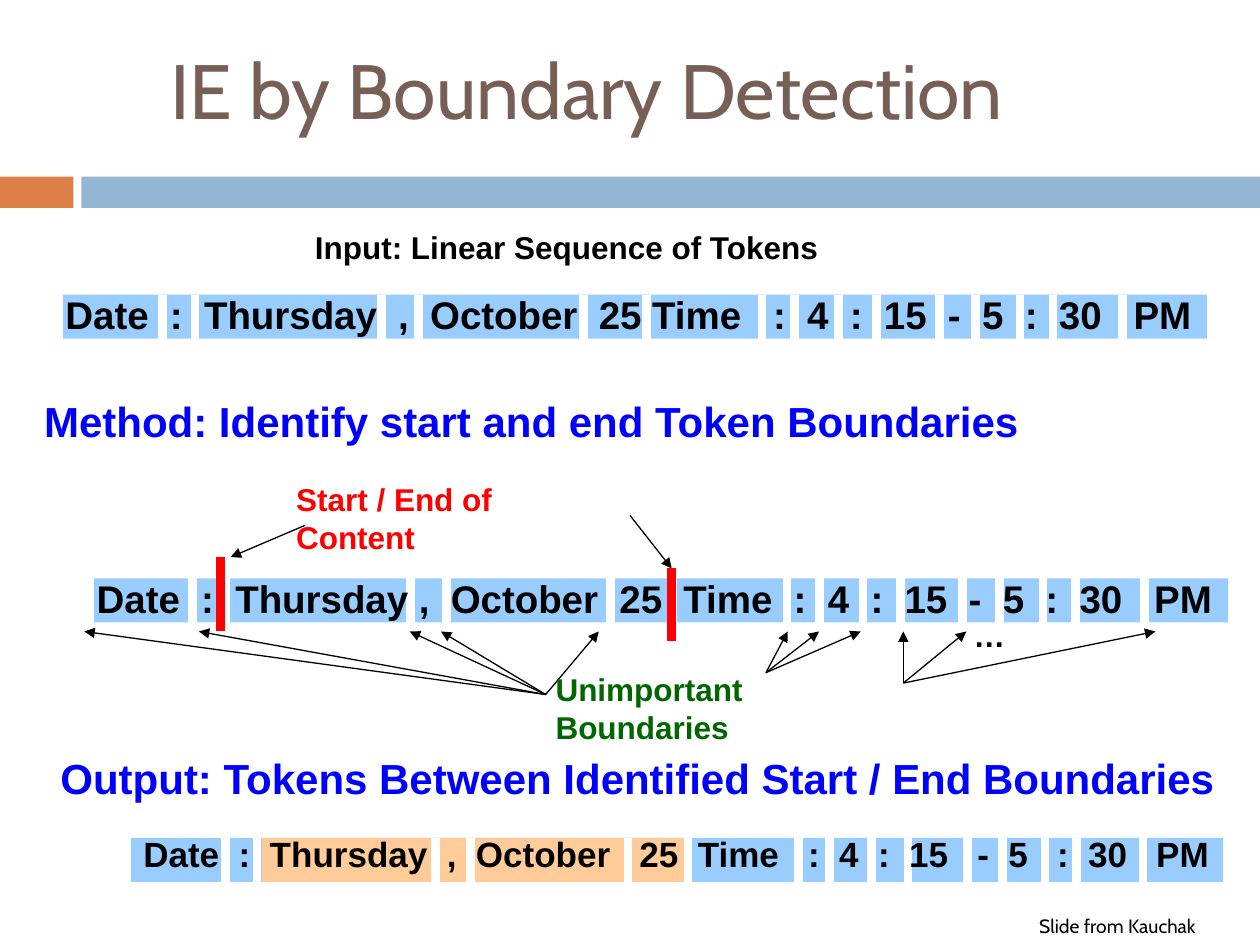
from lxml import etree
from pptx import Presentation
from pptx.dml.color import RGBColor
from pptx.enum.shapes import MSO_CONNECTOR, MSO_SHAPE
from pptx.enum.text import MSO_ANCHOR
from pptx.oxml.ns import qn
from pptx.util import Cm, Pt

RECTANGLE = MSO_SHAPE.RECTANGLE
STRAIGHT = MSO_CONNECTOR.STRAIGHT
TOP, MIDDLE = MSO_ANCHOR.TOP, MSO_ANCHOR.MIDDLE

BLACK, WHITE, RED, BLUE, GREEN = "000000", "FFFFFF", "FF0000", "0000FF", "006600"
TOKEN_BLUE, TOKEN_ORANGE = "99CCFF", "FFCC99"
BAR_HEIGHT = 0.89

# Token boundaries as percentages of the bar width, shared by all three bars
BOUNDARIES = (8.67, 11.55, 27.87, 31.08, 45.5, 51, 61.1, 63.95, 67.8,
              71.13, 76.6, 79.8, 83.67, 86.55, 92.65)

# Apex of each fan of arrows and the x positions of its tips
FANS = (
    ((11, 14), (1.7, 4.01, 8.26, 8.89, 12.07)),
    ((15.44, 13.56), (15.88, 16.51, 17.35)),
    ((18.21, 13.77), (23.29, 18.21, 19.48)),
)
FAN_TIP_Y = 12.73


def color(value):
    return RGBColor.from_string(value)


class SlideBuilder:
    """Holds the text style and the slide being drawn; lengths are in cm."""

    text_style = {"name": "Arial", "bold": True, "size": Pt(18)}

    def __init__(self, slide):
        self.slide = slide

    def rectangle(self, left, top, width, height, fill, shapes=None):
        shape = (shapes or self.slide.shapes).add_shape(
            RECTANGLE, Cm(left), Cm(top), Cm(width), Cm(height))
        shape.shadow.inherit = False
        shape.fill.solid()
        shape.fill.fore_color.rgb = color(fill)
        shape.line.fill.background()

    def line(self, start, end, line_color=BLACK, weight=0.75, arrow=False, shapes=None):
        connector = (shapes or self.slide.shapes).add_connector(
            STRAIGHT, *(Cm(value) for value in (*start, *end)))
        connector.line.color.rgb = color(line_color)
        connector.line.width = Pt(weight)
        if arrow:
            outline = connector.line._get_or_add_ln()
            etree.SubElement(outline, qn("a:tailEnd"), type="triangle")
        etree.SubElement(connector._element.spPr, qn("a:effectLst"))

    def text(self, content, left, top, width, height, text_color=BLACK,
             anchor=TOP, **style):
        box = self.slide.shapes.add_textbox(Cm(left), Cm(top), Cm(width), Cm(height))
        frame = box.text_frame
        frame.word_wrap = True
        frame.vertical_anchor = anchor
        run = frame.paragraphs[0].add_run()
        run.text = content
        for attribute, value in {**self.text_style, **style}.items():
            setattr(run.font, attribute, value)
        run.font.color.rgb = color(text_color)

    def token_bar(self, left, top, width, highlight=None):
        """Draw a grouped bar cut into tokens; highlight is (left, width)."""
        shapes = self.slide.shapes.add_group_shape().shapes
        self.rectangle(left, top, width, BAR_HEIGHT, TOKEN_BLUE, shapes)
        if highlight:
            self.rectangle(highlight[0], top, highlight[1], BAR_HEIGHT,
                           TOKEN_ORANGE, shapes)
        for percent in BOUNDARIES:
            x = left + width * percent / 100
            self.line((x, top), (x, top + BAR_HEIGHT), WHITE, 5, shapes=shapes)


def main():
    presentation = Presentation()
    presentation.slide_width, presentation.slide_height = Cm(25.4), Cm(19.05)
    builder = SlideBuilder(presentation.slides.add_slide(presentation.slide_layouts[6]))

    builder.rectangle(0, 3.56, 1.48, 0.63, "DD8047")
    builder.rectangle(1.64, 3.56, 23.76, 0.63, "94B6D2")
    builder.text("IE by Boundary Detection", 3.18, 0.2, 21.59, 3.18, "775F55",
                 MIDDLE, name="Cabin", size=Pt(44), bold=False)

    # Input
    builder.text("Input: Linear Sequence of Tokens", 6.1, 4.47, 13.23, 1.27)
    builder.token_bar(1.27, 5.94, 23.06)
    builder.text("Date  :  Thursday  ,  October  25 Time   :  4  :  15  -  5  :  30   PM",
                 1.07, 5.74, 23.6, 1.19, size=Pt(22))

    # Output
    builder.token_bar(2.64, 16.89, 22.02, highlight=(5.28, 8.51))
    builder.text("Output: Tokens Between Identified Start / End Boundaries",
                 0.97, 15.04, 24, 1.27, BLUE, size=Pt(24))
    builder.text("Date  :  Thursday  ,  October   25  Time   :  4  :  15   -  5   :  30   PM",
                 2.64, 16.66, 23.6, 1.12, size=Pt(20))

    # Method
    builder.text("Method: Identify start and end Token Boundaries",
                 0.64, 7.85, 21.59, 1.27, BLUE, size=Pt(24))
    builder.text("Start / End of Content", 5.72, 9.55, 6.6, 1.02, RED)
    builder.line((6.15, 10.59), (4.65, 11.23), arrow=True)
    builder.line((12.7, 10.39), (13.54, 11.46), arrow=True)
    builder.text("…", 19.38, 12.29, 1.35, 1.27)
    for apex, tips in FANS:
        for tip in tips:
            builder.line(apex, (tip, FAN_TIP_Y), arrow=True)
    # The box is narrow enough to set the label on two lines
    builder.text("Unimportant Boundaries", 10.95, 13.39, 6, 1.02, GREEN)
    builder.token_bar(1.9, 11.66, 22.86)
    builder.text("Date  :  Thursday ,  October  25  Time  :  4  :  15  -  5  :  30   PM",
                 1.7, 11.46, 23.6, 1.19, size=Pt(22))
    builder.line((4.45, 11.23), (4.45, 12.73), RED, 5)
    builder.line((13.54, 11.46), (13.54, 12.93), RED, 5)

    builder.text("Slide from Kauchak", 20.7, 18.31, 4.7, 0.74,
                 name="Cabin", size=Pt(11), bold=False)
    presentation.save("out.pptx")


if __name__ == "__main__":
    main()
